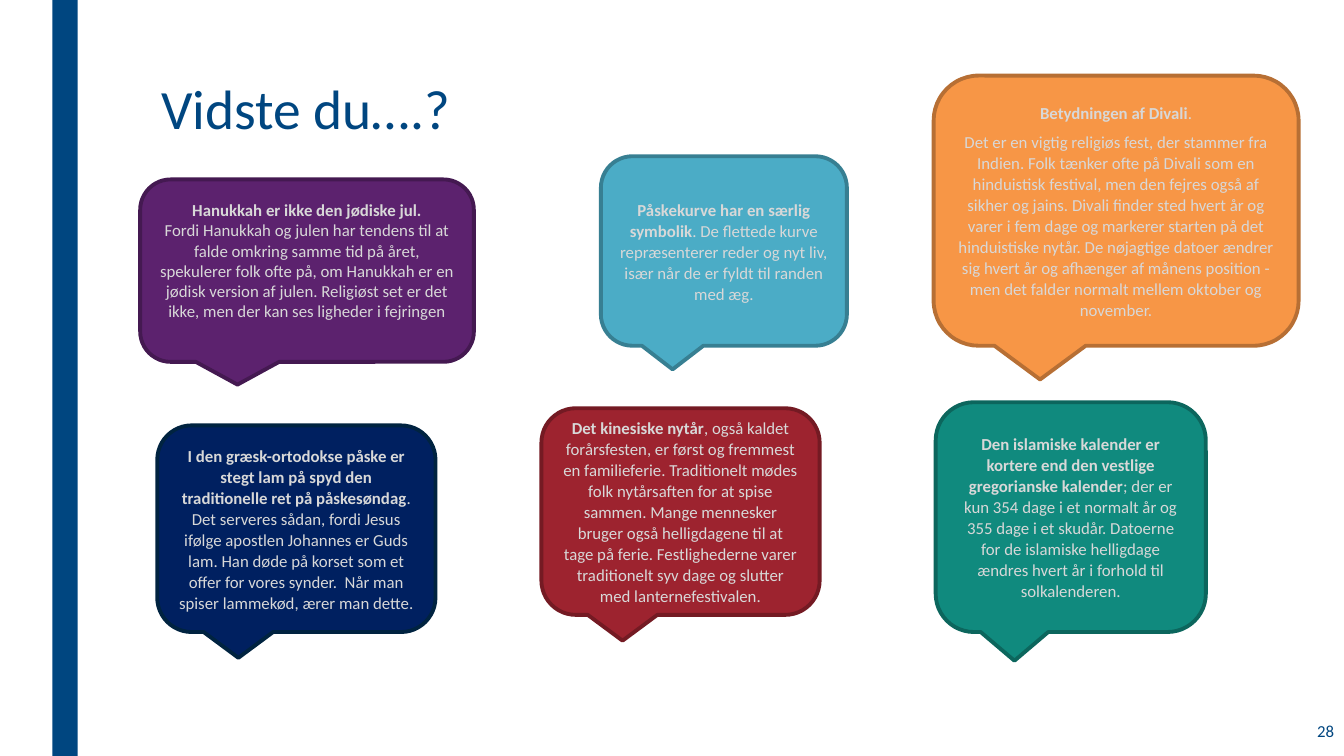
"""Build the slide of six callouts with facts about religious festivals."""
from pptx import Presentation
from pptx.dml.color import RGBColor
from pptx.enum.shapes import MSO_SHAPE
from pptx.enum.text import MSO_ANCHOR, MSO_AUTO_SIZE, PP_ALIGN
from pptx.util import Inches, Pt

NAVY = "004680"
PALE = "D8D8D8"

CALLOUTS = [
    ((1.39, 1.78, 3.31, 1.81), "5C226E", "441951",
     [[("Hanukkah er ikke den jødiske jul.", True)],
      [("Fordi Hanukkah og julen har tendens til at falde omkring samme tid på året, "
        "spekulerer folk ofte på, om Hanukkah er en jødisk version af julen. Religiøst "
        "set er det ikke, men der kan ses ligheder i fejringen", False)]],
     {"line_spacing": 1.0}, {"margin_bottom": Inches(0.25)}),
    ((9.26, 0.75, 3.62, 2.68), "F79646", "B76F34",
     [[("Betydningen af Divali", True), (".", False)],
      [("Det er en vigtig religiøs fest, der stammer fra Indien. Folk tænker ofte på "
        "Divali som en hinduistisk festival, men den fejres også af sikher og jains. "
        "Divali finder sted hvert år og varer i fem dage og markerer starten på det "
        "hinduistiske nytår. De nøjagtige datoer ændrer sig hvert år og afhænger af "
        "månens position - men det falder normalt mellem oktober og november.", False)]],
     {"line_spacing": Pt(15), "space_before": Pt(6)}, {}),
    ((5.96, 1.55, 2.44, 1.88), "4BACC6", "377F92",
     [[("Påskekurve har en særlig symbolik", True),
       (". De flettede kurve repræsenterer reder og nyt liv, især når de er fyldt til "
        "randen med æg.", False)]],
     {"line_spacing": Pt(15)}, {}),
    ((5.37, 4.05, 2.76, 2.05), "9D232F", "741A23",
     [[("Det kinesiske nytår", True),
       (", også kaldet forårsfesten, er først og fremmest en familieferie. Traditionelt "
        "mødes folk nytårsaften for at spise sammen. Mange mennesker bruger også "
        "helligdagene til at tage på ferie. Festlighederne varer traditionelt syv dage "
        "og slutter med lanternefestivalen.", False)]],
     {"line_spacing": Pt(15)}, {}),
    ((9.28, 3.99, 2.68, 2.28), "108A7E", "0C665D",
     [[("Den islamiske kalender er kortere end den vestlige gregorianske kalender", True),
       ("; der er kun 354 dage i et normalt år og 355 dage i et skudår. Datoerne for de "
        "islamiske helligdage ændres hvert år i forhold til solkalenderen.", False)]],
     {"line_spacing": Pt(15)}, {}),
    ((1.56, 4.22, 2.76, 2.05), "002060", "002340",
     [[("I den græsk-ortodokse påske er stegt lam på spyd den traditionelle ret på "
        "påskesøndag", True),
       (". Det serveres sådan, fordi Jesus ifølge apostlen Johannes er Guds lam. Han "
        "døde på korset som et offer for vores synder.  Når man spiser lammekød, ærer "
        "man dette.", False)]],
     {"line_spacing": Pt(15)}, {}),
]


def color(hex_code):
    """Turn a hex string into a colour."""
    return RGBColor.from_string(hex_code)


def apply(target, values):
    """Set each attribute named in the dict."""
    for name, value in values.items():
        setattr(target, name, value)


class FactSlide:
    """Hold the style and the current slide."""

    font_name = "Calibri"

    def __init__(self, deck):
        """Add a title-only slide to the deck."""
        self.slide = deck.slides.add_slide(deck.slide_layouts[5])

    def add_runs(self, paragraph, runs, size, hex_code, layout):
        """Fill a paragraph with (text, bold) runs."""
        apply(paragraph, layout)
        for text, bold in runs:
            run = paragraph.add_run()
            run.text = text
            apply(run.font, {"name": self.font_name, "size": Pt(size), "bold": bold})
            run.font.color.rgb = color(hex_code)

    def heading(self, text, box):
        """Place and format the title placeholder."""
        title = self.slide.shapes.title
        apply(title, dict(zip(("left", "top", "width", "height"), map(Inches, box))))
        apply(title.text_frame, {"word_wrap": True, "auto_size": MSO_AUTO_SIZE.NONE,
                                 "vertical_anchor": MSO_ANCHOR.MIDDLE})
        self.add_runs(title.text_frame.paragraphs[0], [(text, False)], 39.6, NAVY,
                      {"alignment": PP_ALIGN.LEFT, "line_spacing": 0.89})

    def panel(self, kind, box, fill, border=None):
        """Draw a filled shape with an optional border."""
        panel = self.slide.shapes.add_shape(kind, *map(Inches, box))
        panel.shadow.inherit = False
        panel.fill.solid()
        panel.fill.fore_color.rgb = color(fill)
        if border:
            panel.line.color.rgb = color(border)
            panel.line.width = Pt(2.75)
        else:
            panel.line.fill.background()
        return panel

    def callout(self, box, fill, border, paragraphs, layout, frame_format):
        """Draw a speech bubble holding one fact."""
        bubble = self.panel(MSO_SHAPE.ROUNDED_RECTANGULAR_CALLOUT, box, fill, border)
        frame = bubble.text_frame
        apply(frame, {"word_wrap": True, "vertical_anchor": MSO_ANCHOR.MIDDLE,
                      **frame_format})
        for index, runs in enumerate(paragraphs):
            paragraph = frame.add_paragraph() if index else frame.paragraphs[0]
            spacing = layout if index else {**layout, "space_before": Pt(0)}
            self.add_runs(paragraph, runs, 12, PALE,
                          {"alignment": PP_ALIGN.CENTER, **spacing})

    def page_number(self, text, box):
        """Put the page number at the right edge."""
        frame = self.slide.shapes.add_textbox(*map(Inches, box)).text_frame
        apply(frame, {"word_wrap": True, "vertical_anchor": MSO_ANCHOR.MIDDLE})
        self.add_runs(frame.paragraphs[0], [(text, False)], 12, NAVY,
                      {"alignment": PP_ALIGN.RIGHT})


def main():
    """Build and save the deck."""
    deck = Presentation()
    apply(deck, {"slide_width": Inches(13.33), "slide_height": Inches(7.5)})
    facts = FactSlide(deck)
    facts.panel(MSO_SHAPE.RECTANGLE, (0.52, 0, 0.25, 7.5), NAVY)
    facts.heading("Vidste du….?", (1.5, 0.75, 10.5, 0.72))
    facts.page_number("28", (11.58, 7.03, 1.75, 0.44))
    for callout in CALLOUTS:
        facts.callout(*callout)
    deck.save("out.pptx")


if __name__ == "__main__":
    main()
